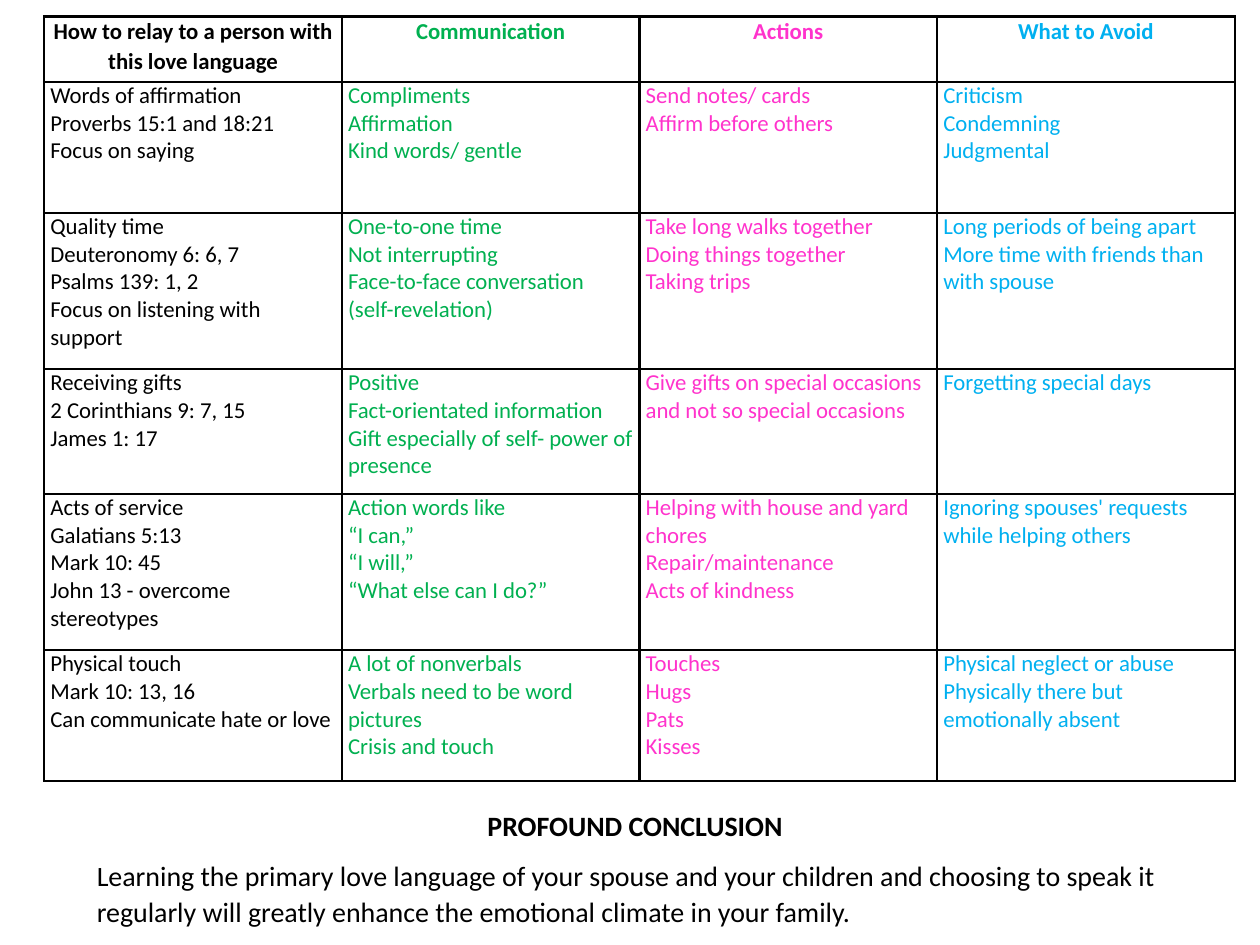
from dataclasses import dataclass

from lxml import etree
from pptx import Presentation
from pptx.dml.color import RGBColor
from pptx.enum.text import PP_ALIGN
from pptx.oxml.ns import qn
from pptx.util import Inches, Pt

CENTER, LEFT = PP_ALIGN.CENTER, PP_ALIGN.LEFT


@dataclass(frozen=True)
class Theme:
    font: str = "Calibri"
    ink: str = "000000"
    columns: tuple = ("000000", "00B050", "FF33CC", "00B0F0")
    table_size: int = 13
    closing_size: int = 16
    border: float = 1.5
    line_spacing: float = 1.07
    space_after: int = 8


THEME = Theme()

HEADERS = ["How to relay to a person with this love language",
           "Communication", "Actions", "What to Avoid"]

# One row per love language; each cell is a list of paragraphs.
LANGUAGES = [
    [["Words of affirmation", "Proverbs 15:1 and 18:21", "Focus on saying"],
     ["Compliments", "Affirmation", "Kind words/ gentle"],
     ["Send notes/ cards", "Affirm before others"],
     ["Criticism", "Condemning", "Judgmental"]],
    [["Quality time", "Deuteronomy 6: 6, 7", "Psalms 139: 1, 2",
      "Focus on listening with support"],
     ["One-to-one time", "Not interrupting", "Face-to-face conversation",
      "(self-revelation)"],
     ["Take long walks together", "Doing things together", "Taking trips"],
     ["Long periods of being apart",
      "More time with friends than with spouse"]],
    [["Receiving gifts", "2 Corinthians 9: 7, 15", "James 1: 17"],
     ["Positive", "Fact-orientated information",
      "Gift especially of self- power of presence"],
     ["Give gifts on special occasions and not so special occasions"],
     ["Forgetting special days"]],
    [["Acts of service", "Galatians 5:13", "Mark 10: 45",
      "John 13 - overcome stereotypes"],
     ["Action words like", "“I can,”", "“I will,”",
      "“What else can I do?”"],
     ["Helping with house and yard chores", "Repair/maintenance",
      "Acts of kindness"],
     ["Ignoring spouses' requests while helping others"]],
    [["Physical touch", "Mark 10: 13, 16", "Can communicate hate or love"],
     ["A lot of nonverbals", "Verbals need to be word pictures",
      "Crisis and touch"],
     ["Touches", "Hugs", "Pats", "Kisses"],
     ["Physical neglect or abuse",
      "Physically there but emotionally absent"]],
]

CONCLUSION_TITLE = "PROFOUND CONCLUSION"
CONCLUSION = ("Learning the primary love language of your spouse and your "
              "children and choosing to speak it regularly will greatly "
              "enhance the emotional climate in your family.")

SLIDE_WIDTH, SLIDE_HEIGHT = Inches(10), Inches(7.5)
TABLE_LEFT, TABLE_TOP, TABLE_WIDTH = Inches(0.35), Inches(0.13), Inches(9.45)
ROW_HEIGHTS = [Inches(height) for height in (0.52, 1.04, 1.24, 0.99, 1.24, 1.04)]
CLOSING_BOX = [Inches(length) for length in (0.67, 6.35, 8.74, 1.06)]
CELL_INSET = Inches(0.05)


def write(frame, lines, size, color, bold=False, align=LEFT, spaced=False):
    """Fill a text frame with one paragraph per line."""
    frame.text = "\n".join(lines)
    for para in frame.paragraphs:
        para.alignment = align
        para.font.name = THEME.font
        para.font.size = Pt(size)
        para.font.bold = bold
        para.font.color.rgb = RGBColor.from_string(color)
        if spaced:
            para.line_spacing = THEME.line_spacing
            para.space_after = Pt(THEME.space_after)


def outline(cell):
    properties = cell._tc.get_or_add_tcPr()
    for position, side in enumerate(("lnL", "lnR", "lnT", "lnB")):
        line = etree.Element(qn(f"a:{side}"), w=str(Pt(THEME.border)))
        fill = etree.SubElement(line, qn("a:solidFill"))
        etree.SubElement(fill, qn("a:srgbClr"), val=THEME.ink)
        properties.insert(position, line)


def add_language_table(page):
    rows = [[[header] for header in HEADERS], *LANGUAGES]
    table = page.shapes.add_table(
        len(rows), len(HEADERS), TABLE_LEFT, TABLE_TOP,
        TABLE_WIDTH, sum(ROW_HEIGHTS)).table
    table.horz_banding = False
    table.first_row = False
    for row, height in zip(table.rows, ROW_HEIGHTS):
        row.height = height
    for r, row in enumerate(rows):
        is_header = r == 0
        for c, (lines, color) in enumerate(zip(row, THEME.columns)):
            cell = table.cell(r, c)
            cell.margin_left = cell.margin_right = CELL_INSET
            cell.margin_top = cell.margin_bottom = 0
            cell.fill.background()
            outline(cell)
            write(cell.text_frame, lines, THEME.table_size, color,
                  bold=is_header, align=CENTER if is_header else LEFT,
                  spaced=is_header)


def add_conclusion(page):
    frame = page.shapes.add_textbox(*CLOSING_BOX).text_frame
    frame.word_wrap = True
    write(frame, [CONCLUSION_TITLE, CONCLUSION], THEME.closing_size,
          THEME.ink, spaced=True)
    title = frame.paragraphs[0]
    title.alignment = CENTER
    title.font.bold = True


def main():
    deck = Presentation()
    deck.slide_width, deck.slide_height = SLIDE_WIDTH, SLIDE_HEIGHT
    page = deck.slides.add_slide(deck.slide_layouts[6])
    add_language_table(page)
    add_conclusion(page)
    deck.save("out.pptx")


if __name__ == "__main__":
    main()
